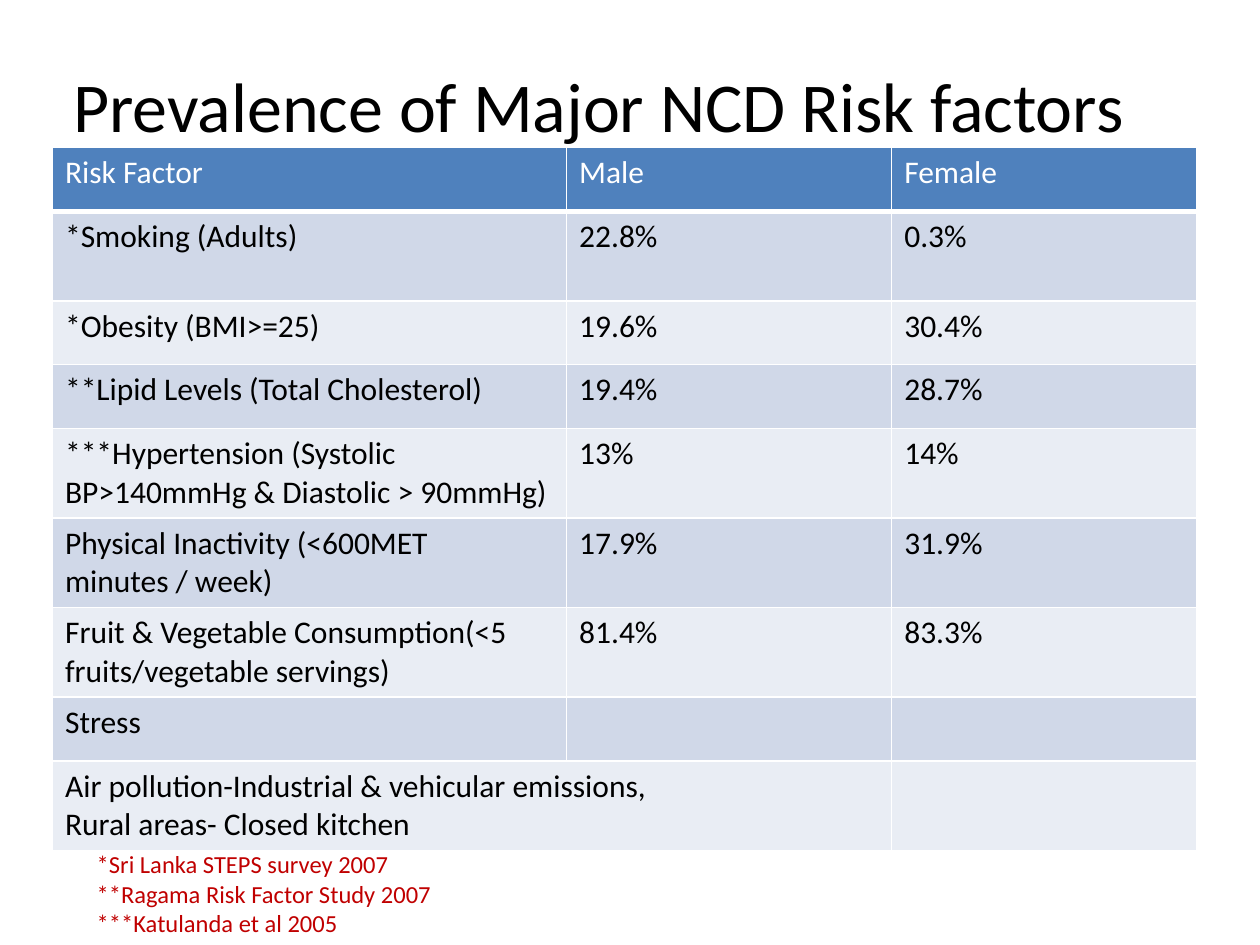
"""Build a slide with a table of the prevalence of major NCD risk factors."""
from lxml.etree import SubElement
from pptx import Presentation
from pptx.dml.color import RGBColor as Color
from pptx.enum.text import MSO_ANCHOR as Anchor, PP_ALIGN as Align
from pptx.oxml.ns import qn
from pptx.util import Pt

COLOURS = {
    "white": "FFFFFF",
    "black": "000000",
    "header": "4F81BD",
    "odd": "D0D8E8",
    "even": "E9EDF4",
    "source": "C00000",
}
FONT = "Calibri"
TITLE = "Prevalence of Major NCD Risk factors"
COLUMN_WIDTHS = (293.8, 185.8, 174.2)
SHORT_ROW, TALL_ROW = 36.4, 51.2
TALL_ROWS = (1, 4, 5, 6, 8)
RISK_FACTORS = [
    ("Risk Factor", "Male", "Female"),
    ("*Smoking (Adults)", "22.8%", "0.3%"),
    ("*Obesity (BMI>=25)", "19.6%", "30.4%"),
    ("**Lipid Levels (Total Cholesterol)", "19.4%", "28.7%"),
    ("***Hypertension (Systolic BP>140mmHg & Diastolic > 90mmHg)", "13%", "14%"),
    ("Physical Inactivity (<600MET minutes / week)", "17.9%", "31.9%"),
    ("Fruit & Vegetable Consumption(<5 fruits/vegetable servings)", "81.4%", "83.3%"),
    ("Stress", "", ""),
    ("Air pollution-Industrial & vehicular emissions,\nRural areas- Closed kitchen", "", ""),
]
SOURCES = "*Sri Lanka STEPS survey 2007\n**Ragama Risk Factor Study 2007\n***Katulanda et al 2005"


def colour(name):
    return Color.from_string(COLOURS[name])


def write(frame, text, size, ink, align=Align.LEFT):
    frame.text = text
    for para in frame.paragraphs:
        para.alignment = align
        para.font.size = Pt(size)
        for span in para.runs:
            span.font.name = FONT
            span.font.size = Pt(size)
            span.font.bold = False
            span.font.color.rgb = colour(ink)


def add_borders(cell, bottom):
    properties = cell._tc.get_or_add_tcPr()
    for side, width in (("L", 1), ("R", 1), ("T", 1), ("B", bottom)):
        line = SubElement(properties, qn(f"a:ln{side}"), w=str(Pt(width)))
        fill = SubElement(line, qn("a:solidFill"))
        SubElement(fill, qn("a:srgbClr"), val=COLOURS["white"])


def set_title(page):
    title = page.shapes.title
    title.left, title.top, title.width, title.height = Pt(18), Pt(18), Pt(648), Pt(84)
    title.text_frame.vertical_anchor = Anchor.MIDDLE
    write(title.text_frame, TITLE, 40, "black", Align.CENTER)


def add_risk_table(page):
    heights = [TALL_ROW if i in TALL_ROWS else SHORT_ROW for i in range(len(RISK_FACTORS))]
    table = page.shapes.add_table(
        len(RISK_FACTORS), len(COLUMN_WIDTHS), Pt(30), Pt(84.4),
        Pt(sum(COLUMN_WIDTHS)), Pt(sum(heights)),
    ).table
    for column, width in zip(table.columns, COLUMN_WIDTHS):
        column.width = Pt(width)
    for i, (values, height) in enumerate(zip(RISK_FACTORS, heights)):
        table.rows[i].height = Pt(height)
        band = "header" if i == 0 else "odd" if i % 2 else "even"
        for j, value in enumerate(values):
            cell = table.cell(i, j)
            add_borders(cell, 1 if i else 3)
            cell.fill.solid()
            cell.fill.fore_color.rgb = colour(band)
            write(cell.text_frame, value, 18, "black" if i else "white")
    last = len(RISK_FACTORS) - 1
    table.cell(last, 0).merge(table.cell(last, 1))


def add_sources(page):
    box = page.shapes.add_textbox(Pt(48.2), Pt(481.7), Pt(480), Pt(58.3))
    box.text_frame.word_wrap = True
    write(box.text_frame, SOURCES, 14, "source")


def main():
    deck = Presentation()
    deck.slide_width, deck.slide_height = Pt(720), Pt(540)
    page = deck.slides.add_slide(deck.slide_layouts.get_by_name("Title Only"))
    add_risk_table(page)
    set_title(page)
    add_sources(page)
    deck.save("out.pptx")


if __name__ == "__main__":
    main()
